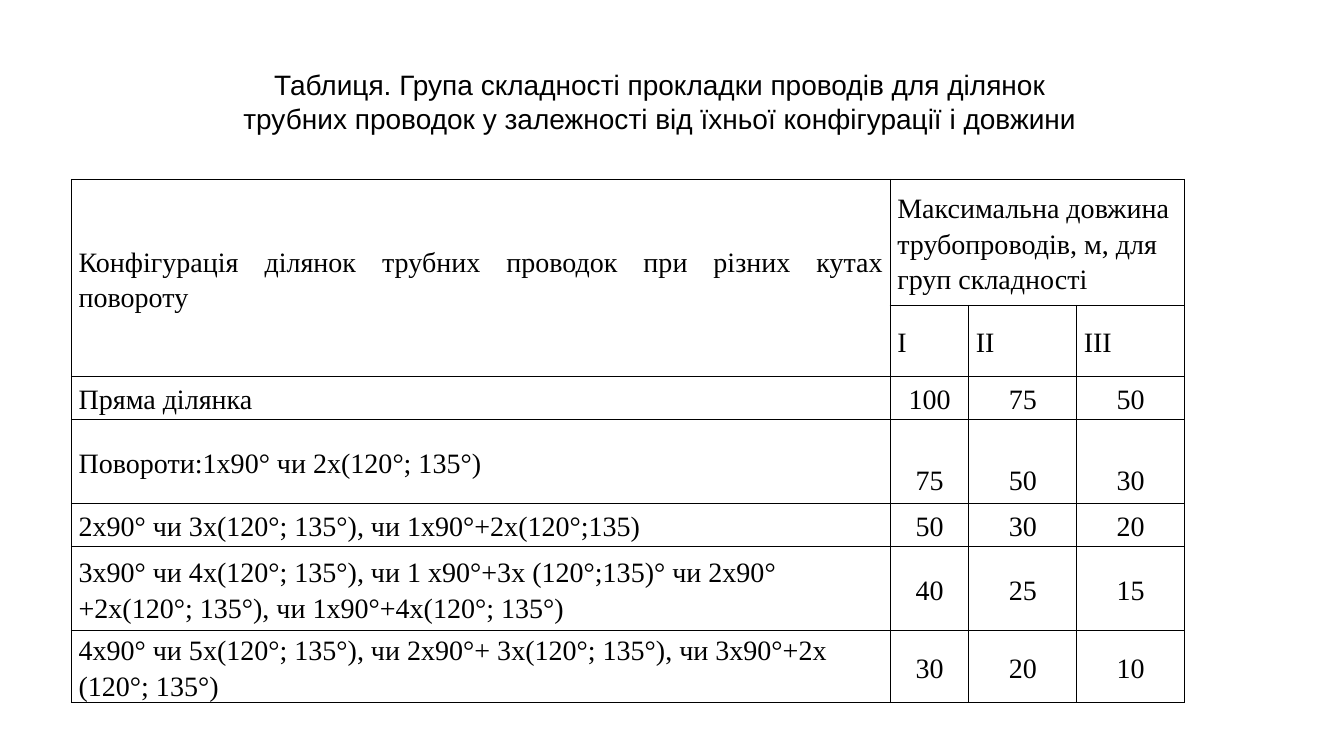
import pptx
import pptx.util
import pptx.dml.color
import pptx.enum.text
import pptx.oxml
import pptx.oxml.ns

Inches = pptx.util.Inches
ALIGN = pptx.enum.text.PP_ALIGN
MIDDLE = pptx.enum.text.MSO_ANCHOR.MIDDLE

TITLE = [
    "Таблиця. Група складності прокладки проводів для ділянок",
    "трубних проводок у залежності від їхньої конфігурації і довжини",
]
CONFIGURATION_HEADER = "Конфігурація ділянок трубних проводок при різних кутах повороту"
LENGTH_HEADER = "Максимальна довжина трубопроводів, м, для груп складності"
GROUPS = ["І", "ІІ", "ІІІ"]
SECTIONS = [
    ("Пряма ділянка", 100, 75, 50),
    ("Повороти:1х90° чи 2х(120°; 135°)", 75, 50, 30),
    ("2х90° чи 3х(120°; 135°), чи 1х90°+2х(120°;135)", 50, 30, 20),
    ("3х90° чи 4х(120°; 135°), чи 1 х90°+3х (120°;135)° чи 2х90°+2х(120°; 135°), чи 1х90°+4х(120°; 135°)", 40, 25, 15),
    ("4х90° чи 5х(120°; 135°), чи 2х90°+ 3х(120°; 135°), чи 3х90°+2х (120°; 135°)", 30, 20, 10),
]
COLUMN_WIDTHS = [8.12, 0.78, 1.07, 1.07]
ROW_HEIGHTS = [1.25, 0.7, 0.42, 0.84, 0.42, 0.84, 0.71]
LOWERED_ROW = 3


def color(value):
    return pptx.dml.color.RGBColor.from_string(value)


def write(text_frame, lines, font, size=20, ink="000000", align=ALIGN.LEFT, spacing=1.0):
    for index, line in enumerate(lines):
        paragraph = text_frame.add_paragraph() if index else text_frame.paragraphs[0]
        paragraph.alignment = align
        paragraph.line_spacing = spacing
        run = paragraph.add_run()
        run.text = line
        run.font.name = font
        run.font.size = pptx.util.Pt(size)
        run.font.color.rgb = color(ink)


class SlideBuilder:
    title_font = "Arial"
    table_font = "Times New Roman"
    border_color = "000000"
    border_width = 1

    def __init__(self, slide):
        self.slide = slide

    def title(self, lines, left, top, width, height):
        shape = self.slide.shapes.add_textbox(Inches(left), Inches(top), Inches(width), Inches(height))
        text_frame = shape.text_frame
        text_frame.word_wrap = False
        text_frame.auto_size = pptx.enum.text.MSO_AUTO_SIZE.SHAPE_TO_FIT_TEXT
        text_frame.vertical_anchor = MIDDLE
        write(text_frame, lines, self.title_font, align=ALIGN.CENTER)

    def table(self, left, top, widths, heights):
        table = self.slide.shapes.add_table(
            len(heights), len(widths), Inches(left), Inches(top), Inches(sum(widths)), Inches(sum(heights))
        ).table
        table.first_row = table.horz_banding = False
        for column, width in zip(table.columns, widths):
            column.width = Inches(width)
        for row, height in zip(table.rows, heights):
            row.height = Inches(height)
        for cell in table.iter_cells():
            cell.fill.background()
            self.borders(cell)
            cell.margin_left = cell.margin_right = Inches(0.07)
            cell.margin_top = cell.margin_bottom = 0
            cell.vertical_anchor = MIDDLE
        return table

    def borders(self, cell):
        properties = cell._tc.get_or_add_tcPr()
        for index, side in enumerate(("lnL", "lnR", "lnT", "lnB")):
            properties.insert(index, pptx.oxml.parse_xml(
                f'<a:{side} {pptx.oxml.ns.nsdecls("a")} w="{pptx.util.Pt(self.border_width)}">'
                f'<a:solidFill><a:srgbClr val="{self.border_color}"/></a:solidFill></a:{side}>'
            ))

    def cell(self, cell, text, align=ALIGN.LEFT):
        write(cell.text_frame, [text], self.table_font, align=align, spacing=1.15)


def main():
    presentation = pptx.Presentation()
    presentation.slide_width = Inches(13.33)
    presentation.slide_height = Inches(7.5)
    builder = SlideBuilder(presentation.slides.add_slide(presentation.slide_layouts[6]))

    table = builder.table(0.71, 1.78, COLUMN_WIDTHS, ROW_HEIGHTS)
    table.cell(0, 0).merge(table.cell(1, 0))
    table.cell(0, 1).merge(table.cell(0, 3))
    builder.cell(table.cell(0, 0), CONFIGURATION_HEADER, align=ALIGN.JUSTIFY)
    builder.cell(table.cell(0, 1), LENGTH_HEADER)
    for column, group in enumerate(GROUPS, 1):
        builder.cell(table.cell(1, column), group)
    for row, (configuration, *lengths) in enumerate(SECTIONS, 2):
        builder.cell(table.cell(row, 0), configuration)
        for column, length in enumerate(lengths, 1):
            cell = table.cell(row, column)
            builder.cell(cell, str(length), align=ALIGN.CENTER)
            if row == LOWERED_ROW:
                cell.margin_top = Inches(0.35)

    builder.title(TITLE, 2.25, 0.62, 8.59, 0.77)
    presentation.save("out.pptx")


if __name__ == "__main__":
    main()
